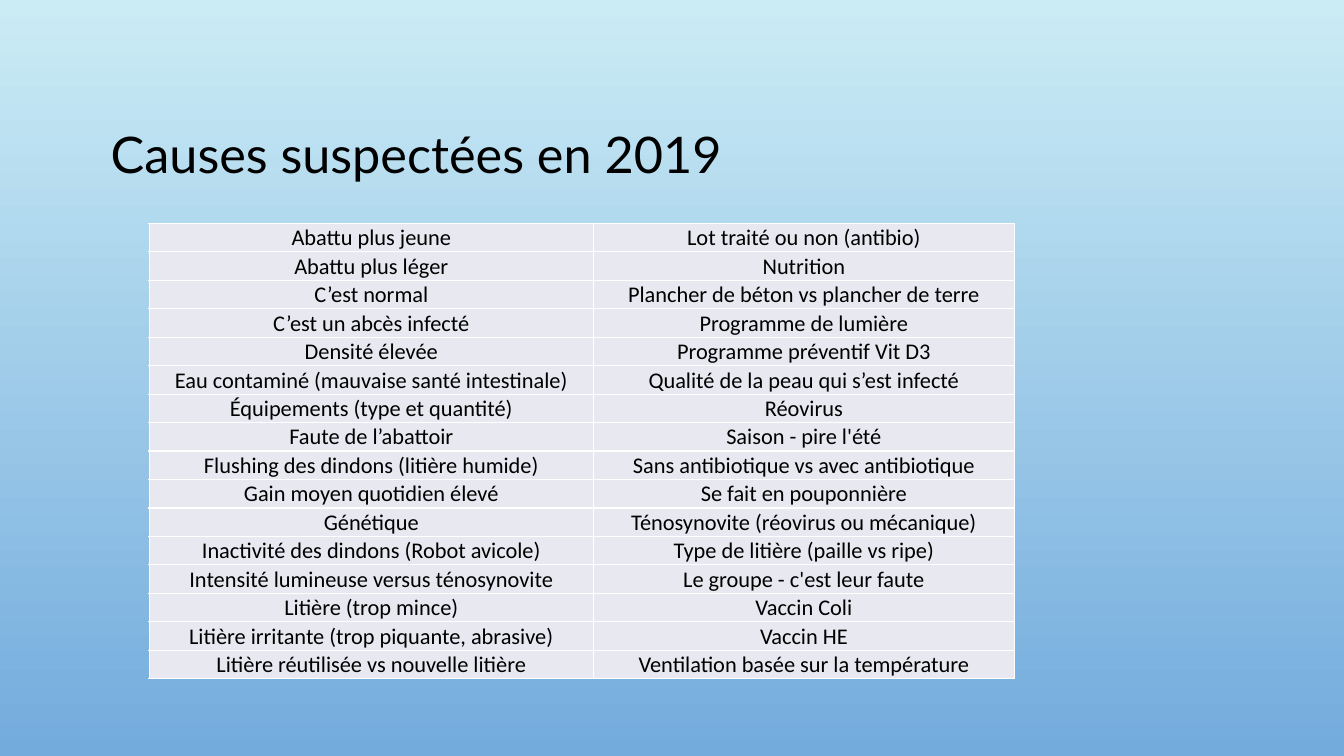
import pptx
import pptx.dml.color
import pptx.enum.text
import pptx.oxml
import pptx.oxml.ns
import pptx.util

Pt = pptx.util.Pt
MIDDLE = pptx.enum.text.MSO_ANCHOR.MIDDLE

TITLE = "Causes suspectées en 2019"
CAUSES = [
    ("Abattu plus jeune", "Lot traité ou non (antibio)"),
    ("Abattu plus léger", "Nutrition"),
    ("C’est normal", "Plancher de béton vs plancher de terre"),
    ("C’est un abcès infecté", "Programme de lumière"),
    ("Densité élevée", "Programme préventif Vit D3"),
    ("Eau contaminé (mauvaise santé intestinale)", "Qualité de la peau qui s’est infecté"),
    ("Équipements (type et quantité)", "Réovirus"),
    ("Faute de l’abattoir", "Saison - pire l'été"),
    ("Flushing des dindons (litière humide)", "Sans antibiotique vs avec antibiotique"),
    ("Gain moyen quotidien élevé", "Se fait en pouponnière"),
    ("Génétique", "Ténosynovite (réovirus ou mécanique)"),
    ("Inactivité des dindons (Robot avicole)", "Type de litière (paille vs ripe)"),
    ("Intensité lumineuse versus ténosynovite", "Le groupe - c'est leur faute"),
    ("Litière (trop mince)", "Vaccin Coli"),
    ("Litière irritante (trop piquante, abrasive)", "Vaccin HE"),
    ("Litière réutilisée vs nouvelle litière", "Ventilation basée sur la température"),
]
BACKGROUND = ("CBECF5", "73ABDD")
CELL_FILL, BORDER, INK = "E8E9F0", "FFFFFF", "000000"
COL_WIDTHS = (317.5, 300.5)
ROW_HEIGHT = 20.35


def rgb(value):
    return pptx.dml.color.RGBColor.from_string(value)


def add_run(p, text, font, size):
    r = p.add_run()
    r.text = text
    r.font.name = font
    r.font.size = Pt(size)
    r.font.color.rgb = rgb(INK)


def add_borders(cell):
    tcPr = cell._tc.get_or_add_tcPr()
    for side in "LRTB":
        tcPr.append(pptx.oxml.parse_xml(
            f'<a:ln{side} {pptx.oxml.ns.nsdecls("a")} w="{Pt(1)}">'
            f'<a:solidFill><a:srgbClr val="{BORDER}"/></a:solidFill></a:ln{side}>'))


def fill_cell(cell, text):
    add_borders(cell)
    cell.fill.solid()
    cell.fill.fore_color.rgb = rgb(CELL_FILL)
    cell.vertical_anchor = MIDDLE
    cell.margin_left = cell.margin_right = cell.margin_top = Pt(0.7)
    cell.margin_bottom = Pt(0)
    p = cell.text_frame.paragraphs[0]
    p.alignment = pptx.enum.text.PP_ALIGN.CENTER
    add_run(p, text, "Calibri", 16)


prs = pptx.Presentation()
prs.slide_width, prs.slide_height = Pt(960), Pt(540)
s = prs.slides.add_slide(prs.slide_layouts[6])

fill = s.background.fill
fill.gradient()
fill.gradient_angle = 270
for stop, color in zip(fill.gradient_stops, BACKGROUND):
    stop.color.rgb = rgb(color)

tf = s.shapes.add_textbox(Pt(72), Pt(49), Pt(816), Pt(126)).text_frame
tf.word_wrap = True
tf.vertical_anchor = MIDDLE
p = tf.paragraphs[0]
p.line_spacing = 0.9
add_run(p, TITLE, "Lato", 36)

table = s.shapes.add_table(
    len(CAUSES), len(COL_WIDTHS), Pt(106.5), Pt(159.6),
    Pt(sum(COL_WIDTHS)), Pt(ROW_HEIGHT * len(CAUSES))).table
table.first_row = table.horz_banding = False
for column, width in zip(table.columns, COL_WIDTHS):
    column.width = Pt(width)
for row, causes in zip(table.rows, CAUSES):
    row.height = Pt(ROW_HEIGHT)
    for cell, cause in zip(row.cells, causes):
        fill_cell(cell, cause)

prs.save("out.pptx")
